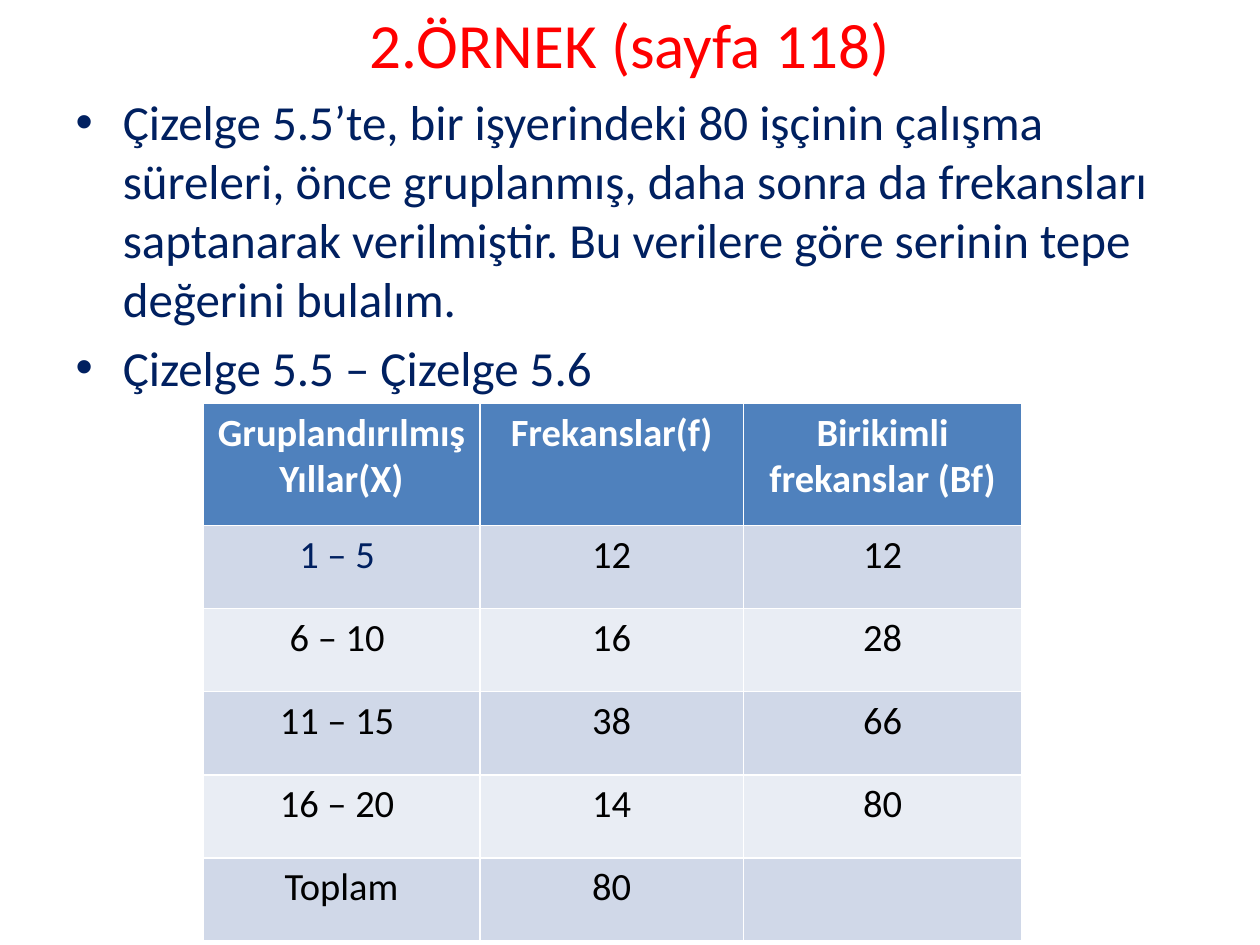
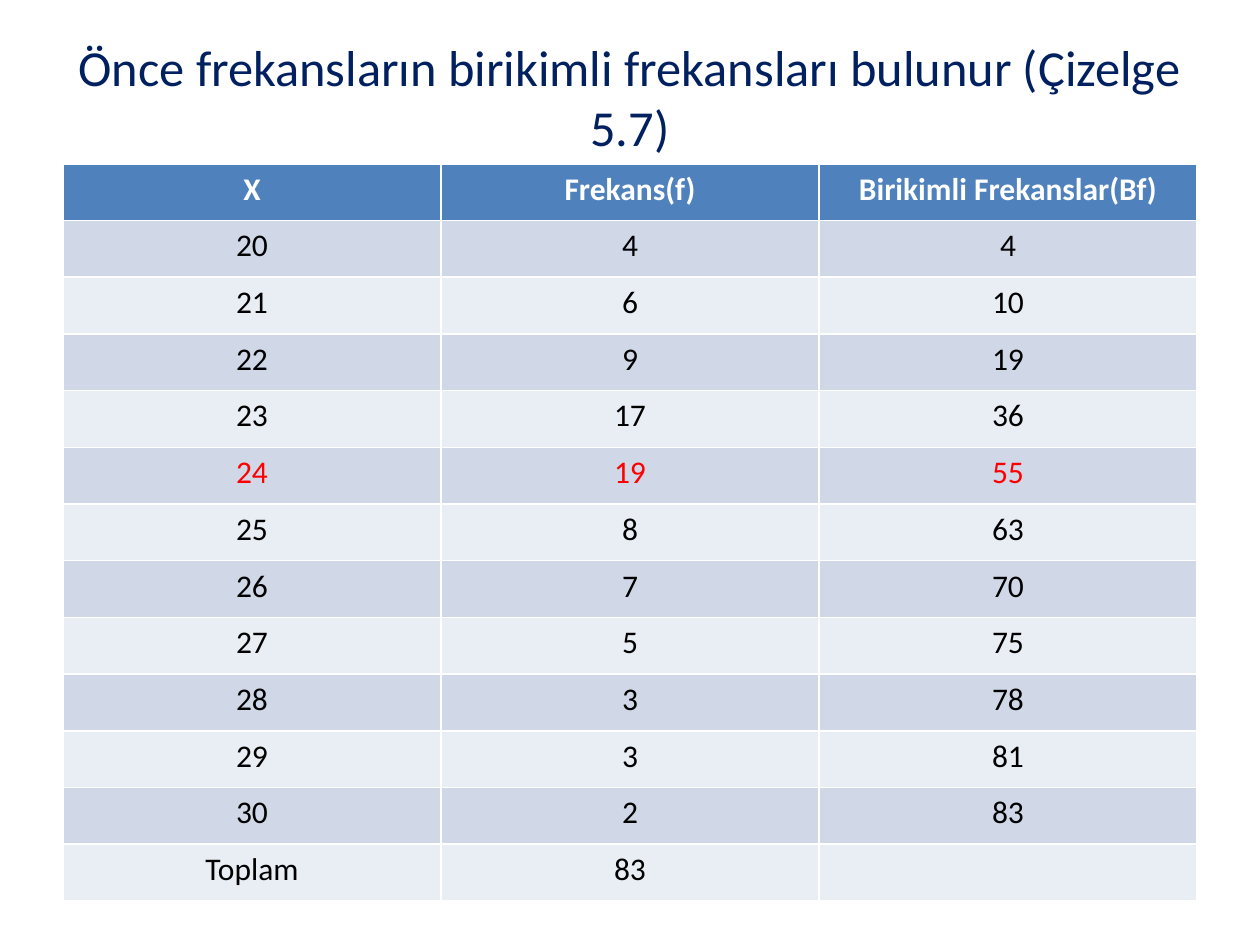
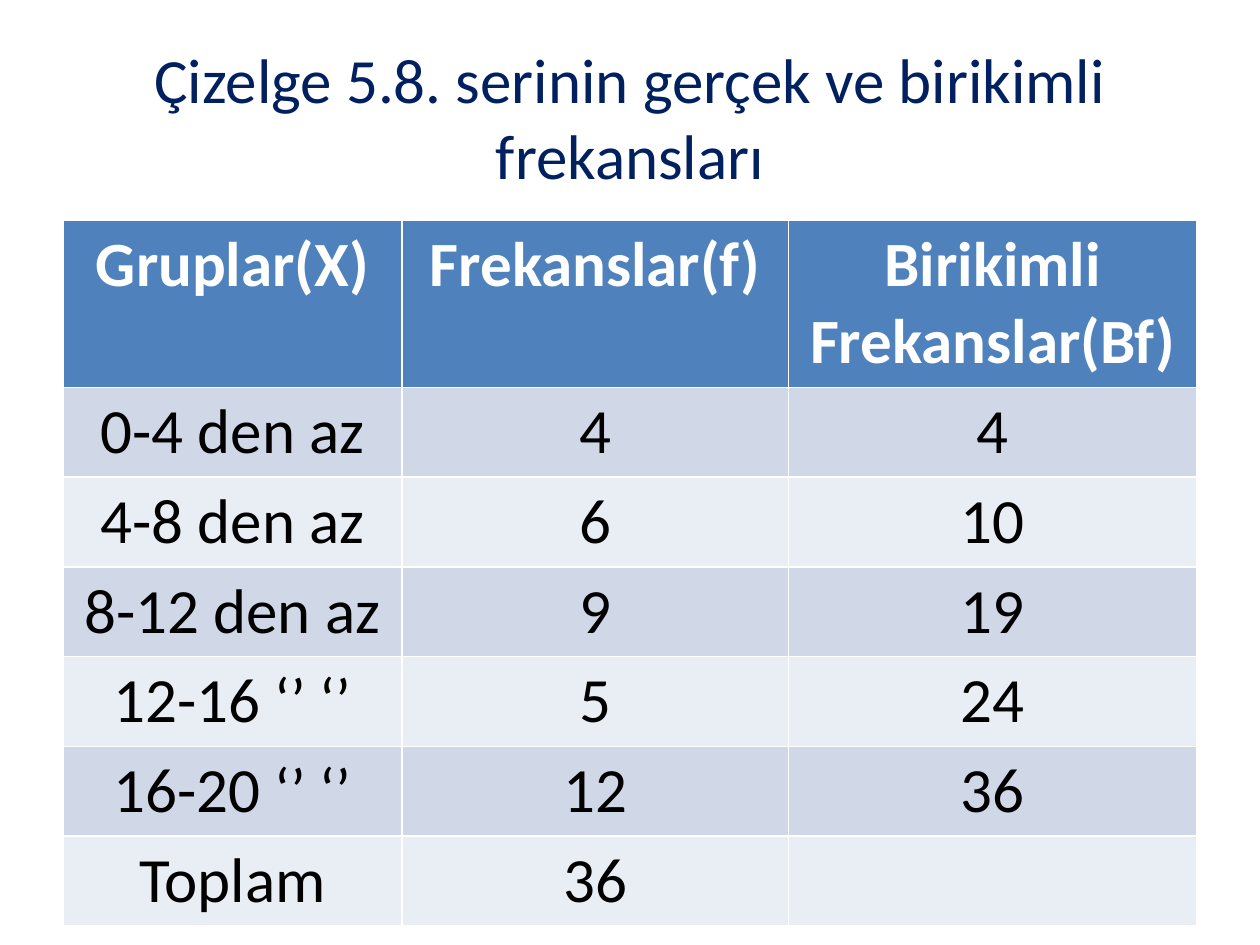
from itertools import accumulate

from pptx import Presentation
from pptx.dml.color import RGBColor
from pptx.enum import text
from pptx.util import Inches, Pt

RED = RGBColor(0xFF, 0x00, 0x00)
NAVY = RGBColor(0x00, 0x20, 0x60)
BLACK = RGBColor(0x00, 0x00, 0x00)
WHITE = RGBColor(0xFF, 0xFF, 0xFF)
BLUE = RGBColor(0x4F, 0x81, 0xBD)
BANDS = (RGBColor(0xD0, 0xD8, 0xE8), RGBColor(0xE9, 0xED, 0xF4))
FONT = "Calibri"
LEFT, WIDE = 0.5, 9
TITLE_BODY, TITLE_ONLY = 1, 5

# Each table lists groups with their frequencies; "marks" colours cells by (row, column).
SLIDES = [
    {
        "title": "2.ÖRNEK (sayfa 118)",
        "top": 0, "high": 0.68, "size": 36, "color": RED,
        "body": [
            "Çizelge 5.5’te, bir işyerindeki 80 işçinin çalışma süreleri, "
            "önce gruplanmış, daha sonra da frekansları saptanarak "
            "verilmiştir. Bu verilere göre serinin tepe değerini bulalım.",
            "Çizelge 5.5 – Çizelge 5.6",
        ],
        "table": {
            "head": ("Gruplandırılmış Yıllar(X)", "Frekanslar(f)",
                     "Birikimli frekanslar (Bf)"),
            "data": [("1 – 5 ", 12), ("6 – 10 ", 16),
                     ("11 – 15 ", 38), ("16 – 20 ", 14)],
            "left": 1.61, "top": 3.2, "cols": (2.2, 2.09, 2.21),
            "first": 0.97, "row": 0.66, "size": 22,
            "marks": {(1, 0): NAVY},
        },
    },
    {
        "title": "Önce frekansların birikimli frekansları bulunur (Çizelge 5.7)",
        "top": 0.3, "high": 0.93, "size": 28.8, "color": NAVY,
        "table": {
            "head": ("X", "Frekans(f)", "Birikimli Frekanslar(Bf)"),
            "data": list(zip(range(20, 31),
                             (4, 6, 9, 17, 19, 8, 7, 5, 3, 3, 2))),
            "left": LEFT, "top": 1.3, "cols": (3, 3, 3),
            "first": 0.45, "row": 0.45, "size": 18,
            "marks": {(5, col): RED for col in range(3)},
        },
    },
    {
        "title": "Çizelge 5.8. serinin gerçek ve birikimli frekansları",
        "top": 0.3, "high": 1.25, "size": 36, "color": NAVY,
        "table": {
            "head": ("Gruplar(X)", "Frekanslar(f)", "Birikimli Frekanslar(Bf)"),
            "data": [("0-4 den az", 4), ("4-8 den az", 6), ("8-12 den az", 9),
                     ("12-16 ‘’ ‘’", 5), ("16-20 ‘’ ‘’", 12)],
            "left": LEFT, "top": 1.75, "cols": (2.69, 3.07, 3.24),
            "first": 1.31, "row": 0.71, "size": 36,
            "marks": {},
        },
    },
]


def style(font, size, color, bold=False):
    look = {"name": FONT, "size": Pt(size), "bold": bold}
    for name, value in look.items():
        setattr(font, name, value)
    font.color.rgb = color


def fill_text(holder, lines, top, high, size, color):
    """Move a placeholder and give it one paragraph per line."""
    place = {"left": LEFT, "top": top, "width": WIDE, "height": high}
    for name, value in place.items():
        setattr(holder, name, Inches(value))
    frame = holder.text_frame
    frame.text = "\n".join(lines)
    frame.auto_size = text.MSO_AUTO_SIZE.NONE
    for para in frame.paragraphs:
        for run in para.runs:
            style(run.font, size, color)


def expand(head, data):
    """Add the cumulative column and the total row."""
    names, counts = zip(*data)
    return [head, *zip(names, counts, accumulate(counts)),
            ("Toplam", sum(counts), "")]


def add_grid(slide, info):
    rows = expand(info["head"], info["data"])
    cols = info["cols"]
    highs = [info["first"]] + [info["row"]] * (len(rows) - 1)
    grid = slide.shapes.add_table(
        len(rows), len(cols), Inches(info["left"]), Inches(info["top"]),
        Inches(sum(cols)), Inches(sum(highs))).table
    for col, width in zip(grid.columns, cols):
        col.width = Inches(width)
    for row, high in zip(grid.rows, highs):
        row.height = Inches(high)
    for r, row in enumerate(rows):
        for c, value in enumerate(row):
            cell = grid.cell(r, c)
            cell.fill.solid()
            cell.fill.fore_color.rgb = BANDS[(r - 1) % 2] if r else BLUE
            if value == "":
                continue
            para = cell.text_frame.paragraphs[0]
            para.alignment = text.PP_ALIGN.CENTER
            run = para.add_run()
            run.text = str(value)
            color = info["marks"].get((r, c), BLACK) if r else WHITE
            style(run.font, info["size"], color, bold=r == 0)


def main():
    deck = Presentation()
    deck.slide_width, deck.slide_height = Inches(10), Inches(7.5)
    for page in SLIDES:
        body = page.get("body")
        layout = deck.slide_layouts[TITLE_BODY if body else TITLE_ONLY]
        slide = deck.slides.add_slide(layout)
        fill_text(slide.shapes.title, [page["title"]], page["top"],
                  page["high"], page["size"], page["color"])
        if body:
            fill_text(slide.placeholders[1], body, page["high"],
                      7.5 - page["high"], 28, NAVY)
        add_grid(slide, page["table"])
    deck.save("out.pptx")


if __name__ == "__main__":
    main()
